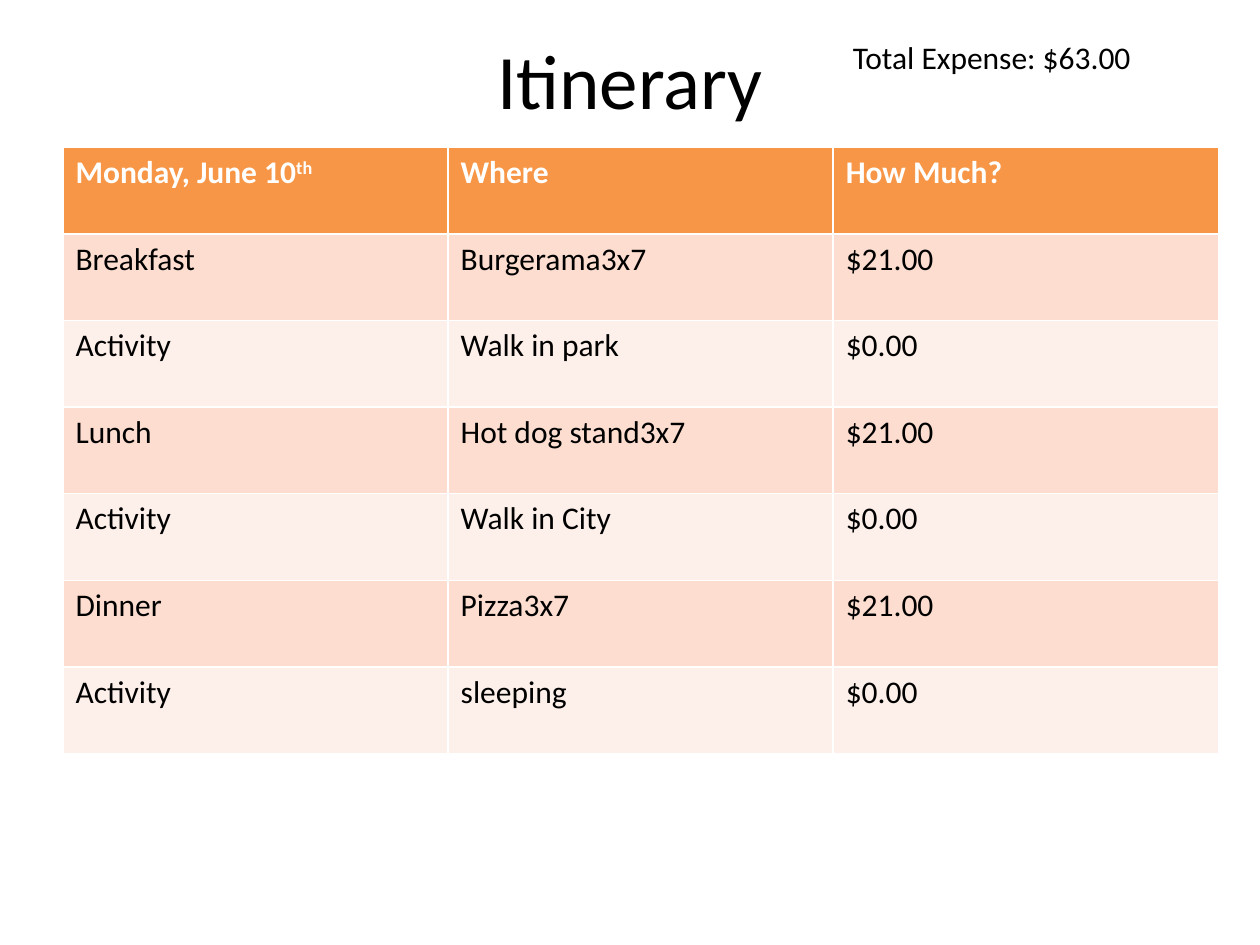
from pptx import Presentation
from pptx.dml.color import RGBColor
from pptx.enum import text
from pptx.util import Inches, Pt

HEADER = ("Monday, June 10", "Where", "How Much?")
PLAN = [
    ("Breakfast", "Burgerama3x7", "$21.00"),
    ("Activity", "Walk in park", "$0.00"),
    ("Lunch", "Hot dog stand3x7", "$21.00"),
    ("Activity", "Walk in City", "$0.00"),
    ("Dinner", "Pizza3x7", "$21.00"),
    ("Activity", "sleeping", "$0.00"),
]
HEADER_FILL, BANDS = "F79646", ("FCDDCF", "FDEFE9")


def color(hex_string):
    return RGBColor.from_string(hex_string)


def format_runs(p, size, hex_string="000000", bold=False):
    for r in p.runs:
        r.font.name = "Calibri"
        r.font.size = Pt(size)
        r.font.bold = bold
        r.font.color.rgb = color(hex_string)


prs = Presentation()
prs.slide_width, prs.slide_height = Inches(10), Inches(7.5)
s = prs.slides.add_slide(prs.slide_layouts[5])

title = s.shapes.title
title.left, title.top = Inches(0.5), Inches(0)
title.width, title.height = Inches(9), Inches(1.25)
tf = title.text_frame
tf.text = "Itinerary"
tf.vertical_anchor = text.MSO_ANCHOR.MIDDLE
tf.paragraphs[0].alignment = text.PP_ALIGN.CENTER
format_runs(tf.paragraphs[0], 44)

total = s.shapes.add_textbox(Inches(6.67), Inches(0.25), Inches(3.08), Inches(0.4))
tf = total.text_frame
tf.word_wrap = True
tf.auto_size = text.MSO_AUTO_SIZE.SHAPE_TO_FIT_TEXT
tf.text = "Total Expense: $63.00"
format_runs(tf.paragraphs[0], 18)

# The default table style supplies the white rules between the cells.
rows = [HEADER] + PLAN
table = s.shapes.add_table(len(rows), len(HEADER), Inches(0.5), Inches(1.17),
                           Inches(9.17), Inches(4.81)).table
for i, values in enumerate(rows):
    is_header = i == 0
    for j, value in enumerate(values):
        cell = table.cell(i, j)
        cell.fill.solid()
        cell.fill.fore_color.rgb = color(HEADER_FILL if is_header else BANDS[(i - 1) % 2])
        p = cell.text_frame.paragraphs[0]
        p.text = value
        if is_header and j == 0:
            r = p.add_run()
            r.text = "th"
            r.font._element.set("baseline", "30000")
        format_runs(p, 18, "FFFFFF" if is_header else "000000", is_header)

prs.save("out.pptx")
